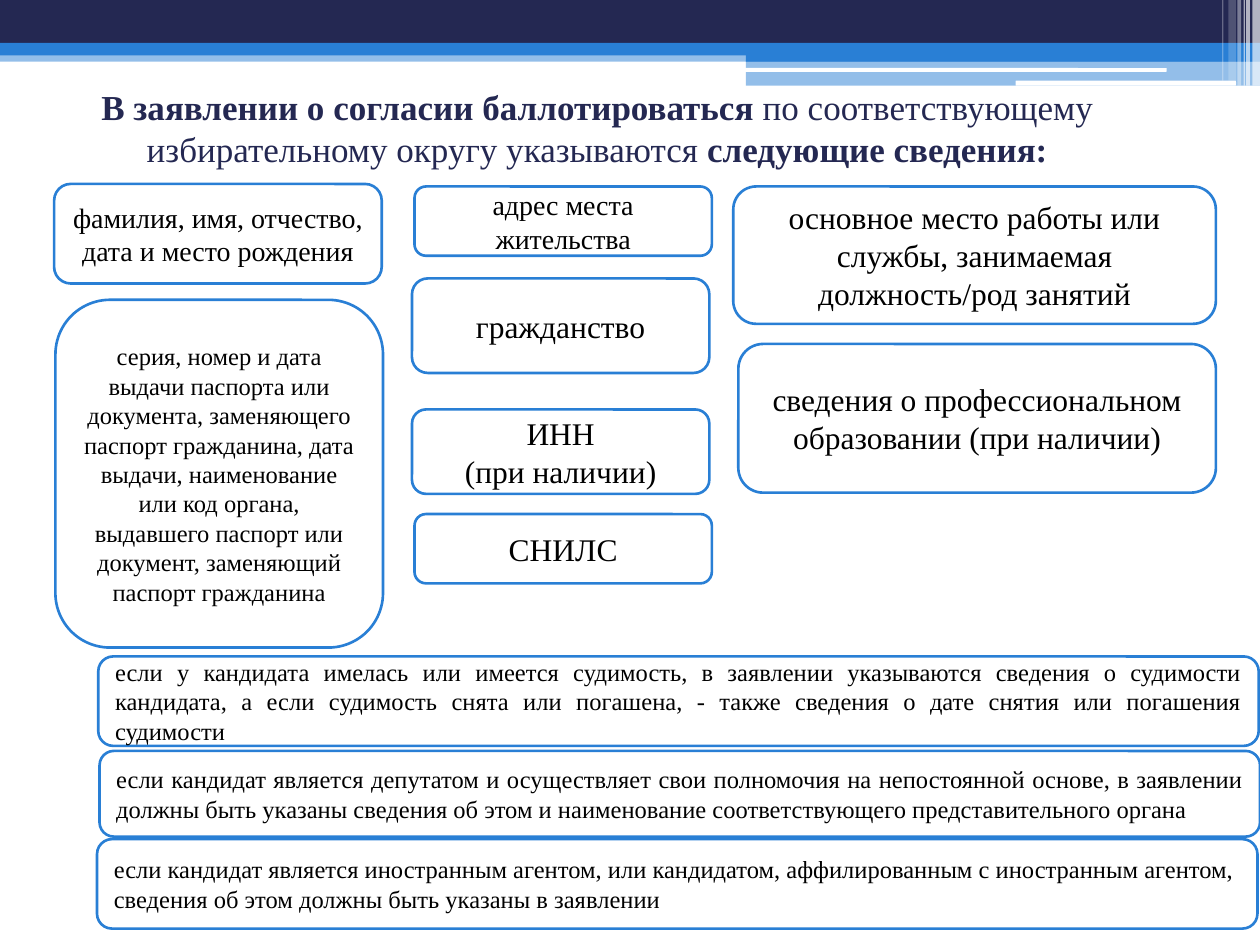
from lxml import etree
from pptx import Presentation
from pptx.dml.color import RGBColor
from pptx.enum import shapes, text
from pptx.oxml.ns import qn
from pptx.util import Inches, Pt

NAVY, BLUE, WHITE, BLACK = "242852", "297FD5", "FFFFFF", "000000"
CENTER, JUSTIFY, LEFT = text.PP_ALIGN.CENTER, text.PP_ALIGN.JUSTIFY, text.PP_ALIGN.LEFT
RECT, ROUND = shapes.MSO_SHAPE.RECTANGLE, shapes.MSO_SHAPE.ROUNDED_RECTANGLE

prs = Presentation()
prs.slide_width, prs.slide_height = Inches(10), Inches(7.5)
s = prs.slides.add_slide(prs.slide_layouts[5])


def add_box(x, y, w, h, fill, kind=RECT, alpha=100, line=None):
    sp = s.shapes.add_shape(kind, Inches(x), Inches(y), Inches(w), Inches(h))
    sp.shadow.inherit = False
    sp.fill.solid()
    sp.fill.fore_color.rgb = RGBColor.from_string(fill)
    if alpha < 100:
        clr = sp.fill._xPr.find(qn("a:solidFill"))[0]
        etree.SubElement(clr, qn("a:alpha"), val=str(alpha * 1000))
    if line:
        sp.line.color.rgb = RGBColor.from_string(line)
        sp.line.width = Pt(1.5)
    else:
        sp.line.fill.background()
    return sp


def add_text(p, words, size=14, color=BLACK, bold=False, align=CENTER):
    p.alignment = align
    for i, part in enumerate(words.split("\n")):
        if i:
            p.add_line_break()
        r = p.add_run()
        r.text = part
        r.font.name = "Times New Roman"
        r.font.size = Pt(size)
        r.font.bold = bold
        r.font.color.rgb = RGBColor.from_string(color)


# Header bands: x, y, width, height, colour, opacity
for x, y, w, h, color, alpha in [
    (0, 0.4, 10, 0.09, BLUE, 50),
    (0, 0, 10, 0.34, NAVY, 100),
    (0, 0.34, 10, 0.1, BLUE, 100),
    (5.92, 0.39, 4.08, 0.1, BLUE, 100),
    (5.92, 0.48, 4.08, 0.2, BLUE, 50),
]:
    add_box(x, y, w, h, color, alpha=alpha)

# White strips in the header
for x, y, w, h in [(5.91, 0.54, 3.35, 0.03), (8.06, 0.64, 1.75, 0.04)]:
    add_box(x, y, w, h, WHITE, ROUND)

# Translucent vertical stripes in the corner: x, width, height, opacity
for x, w, h, alpha in [
    (9.94, 0.06, 0.68, 65),
    (9.89, 0.03, 0.68, 65),
    (9.87, 0.01, 0.68, 60),
    (9.82, 0.03, 0.68, 40),
    (9.75, 0.06, 0.64, 20),
    (9.7, 0.01, 0.64, 30),
]:
    add_box(x, 0, w, h, WHITE, alpha=alpha)

# Title
title = s.shapes.title
title.left, title.top = Inches(0.24), Inches(0.58)
title.width, title.height = Inches(9), Inches(0.87)
tf = title.text_frame
tf.word_wrap = True
tf.auto_size = text.MSO_AUTO_SIZE.NONE
tf.vertical_anchor = text.MSO_ANCHOR.MIDDLE
for words, bold in [
    ("В заявлении о согласии баллотироваться ", True),
    ("по соответствующему избирательному округу указываются ", False),
    ("следующие сведения:", True),
]:
    add_text(tf.paragraphs[0], words, size=20, color=NAVY, bold=bold)

# Cards: x, y, width, height, text size, alignment, words
cards = [
    (0.43, 1.46, 2.6, 0.79, 16, CENTER, "фамилия, имя, отчество, дата и место рождения"),
    (3.29, 1.48, 2.36, 0.55, 16, CENTER, "адрес места жительства"),
    (0.44, 2.38, 2.6, 2.76, 14, CENTER,
     "серия, номер и дата выдачи паспорта или документа, заменяющего паспорт "
     "гражданина, дата выдачи, наименование или код органа, выдавшего паспорт "
     "или документ, заменяющий паспорт гражданина"),
    (3.27, 2.21, 2.36, 0.75, 18, CENTER, "гражданство"),
    (3.27, 3.25, 2.36, 0.67, 18, CENTER, "ИНН\n(при наличии)"),
    (3.29, 4.08, 2.36, 0.55, 18, CENTER, "СНИЛС"),
    (5.82, 1.48, 3.83, 1.09, 18, CENTER,
     "основное место работы или службы, занимаемая должность/род занятий"),
    (5.86, 2.73, 3.79, 1.18, 18, CENTER,
     "сведения о профессиональном образовании (при наличии)"),
    (0.78, 5.21, 9.21, 0.71, 14, JUSTIFY,
     "если у кандидата имелась или имеется судимость, в заявлении указываются "
     "сведения о судимости кандидата, а если судимость снята или погашена, - "
     "также сведения о дате снятия или погашения судимости"),
    (0.79, 5.96, 9.21, 0.68, 14, JUSTIFY,
     "если кандидат является депутатом и осуществляет свои полномочия на "
     "непостоянной основе, в заявлении должны быть указаны сведения об этом и "
     "наименование соответствующего представительного органа"),
    (0.77, 6.66, 9.21, 0.71, 14, LEFT,
     "если кандидат является иностранным агентом, или кандидатом, "
     "аффилированным с иностранным агентом, сведения об этом должны быть "
     "указаны в заявлении"),
]
for x, y, w, h, size, align, words in cards:
    tf = add_box(x, y, w, h, WHITE, ROUND, line=BLUE).text_frame
    tf.word_wrap = True
    tf.vertical_anchor = text.MSO_ANCHOR.MIDDLE
    add_text(tf.paragraphs[0], words, size=size, align=align)

prs.save("out.pptx")
